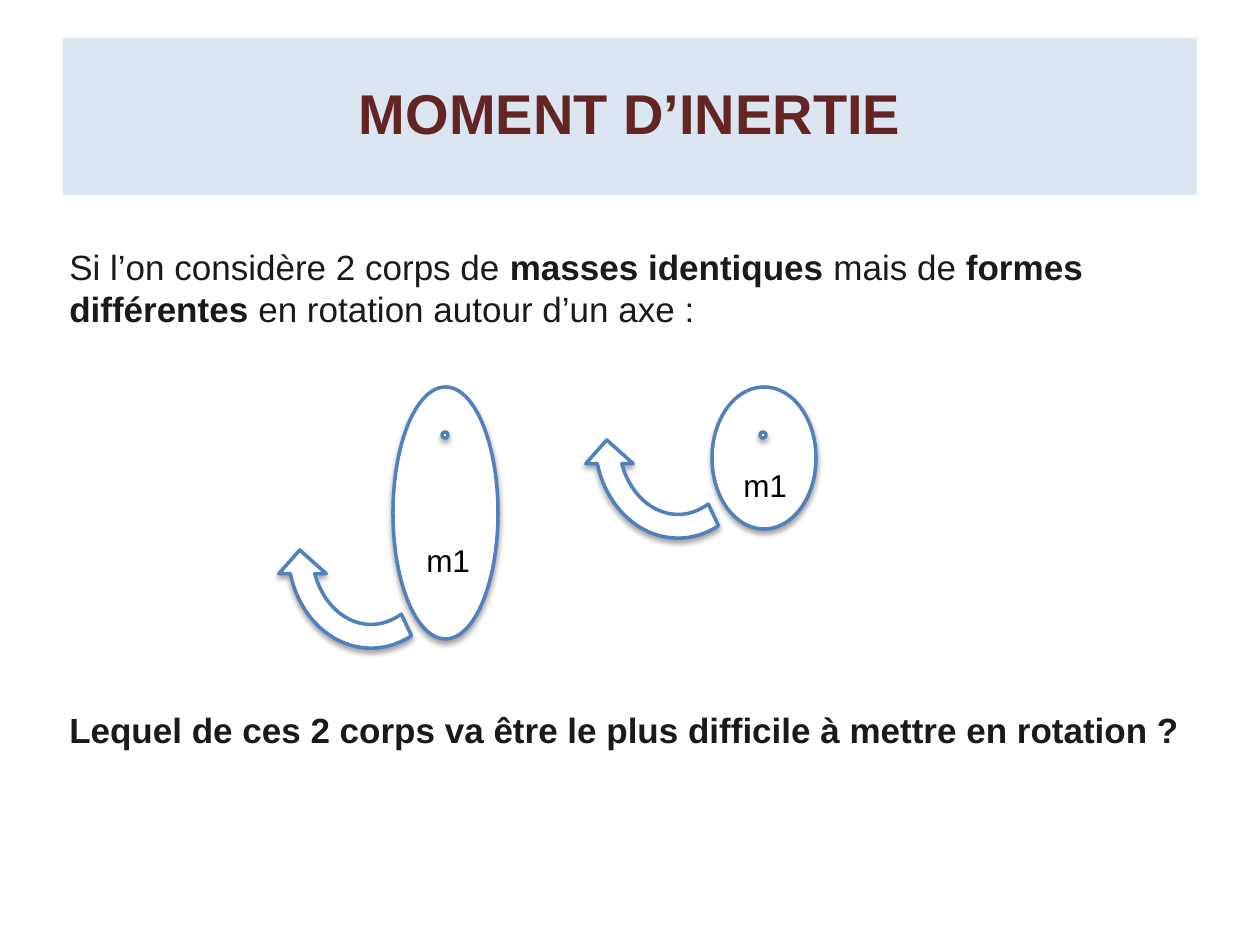
from lxml import etree
from pptx import Presentation
from pptx import util as u
from pptx.dml.color import RGBColor
from pptx.enum import shapes, text
from pptx.oxml import parse_xml
from pptx.oxml.ns import nsdecls

PX = u.Inches(1) / 126
FONT = "Arial"
WHITE = RGBColor(0xFF, 0xFF, 0xFF)
BLACK = RGBColor(0, 0, 0)
BANNER = RGBColor(0xDC, 0xE6, 0xF2)
MAROON = RGBColor(0x63, 0x25, 0x23)
INK = RGBColor(0x1A, 0x1A, 0x1A)
BLUE = RGBColor(0x4F, 0x81, 0xBD)
SHADOW = (
    f"<a:effectLst {nsdecls('a')}>"
    '<a:outerShdw blurRad="38100" dist="23000" dir="5400000" rotWithShape="0">'
    '<a:srgbClr val="000000"><a:alpha val="35000"/></a:srgbClr>'
    "</a:outerShdw></a:effectLst>"
)
ARROW_ADJUSTMENTS = (0.125, 11.423, 204.577, 146.833, 0.125)
STATEMENT = (
    ("Si l’on considère 2 corps de ", False),
    ("masses identiques ", True),
    ("mais de ", False),
    ("formes différentes ", True),
    ("en rotation autour d’un axe :", False),
)
QUESTION = "Lequel de ces 2 corps va être le plus difficile à mettre en rotation ?"


def emu(*lengths):
    """Turn px lengths into EMU."""
    return [round(length * PX) for length in lengths]


def style(paragraph, size, color, bold=None):
    """Set the font of a whole paragraph."""
    font = paragraph.font
    font.name, font.size, font.bold = FONT, u.Pt(size), bold
    font.color.rgb = color


def set_margins(frame, margin):
    """Give a text frame equal margins and wrapping."""
    frame.word_wrap = True
    frame.margin_left = frame.margin_right = u.Inches(margin)
    frame.margin_top = frame.margin_bottom = u.Inches(margin)


def add_title(slide, wording, box):
    """Add the title banner."""
    banner = slide.shapes.add_shape(shapes.MSO_SHAPE.RECTANGLE, *emu(*box))
    banner.shadow.inherit = False
    banner.fill.solid()
    banner.fill.fore_color.rgb = BANNER
    banner.line.fill.background()
    frame = banner.text_frame
    set_margins(frame, 0)
    frame.vertical_anchor = text.MSO_ANCHOR.MIDDLE
    title = frame.paragraphs[0]
    title.text = wording
    title.alignment = text.PP_ALIGN.CENTER
    title.line_spacing = 0.9
    style(title, 32, MAROON, True)


def add_text_frame(slide, box):
    """Add a text box and return its frame."""
    frame = slide.shapes.add_textbox(*emu(*box)).text_frame
    set_margins(frame, 0.05)
    return frame


def add_body(slide, box):
    """Add the statement and the question below the drawing."""
    frame = add_text_frame(slide, box)
    statement = frame.paragraphs[0]
    for wording, bold in STATEMENT:
        run = statement.add_run()
        run.text, run.font.bold = wording, bold
    style(statement, 20, INK)
    question = frame.add_paragraph()
    question.text = QUESTION
    question.space_before = u.Pt(217)
    style(question, 20, INK, True)


def add_outlined(slide, preset, box):
    """Add a white shape with a blue outline and a soft shadow."""
    outlined = slide.shapes.add_shape(preset, *emu(*box))
    outlined.fill.solid()
    outlined.fill.fore_color.rgb = WHITE
    outlined.line.color.rgb = BLUE
    outlined.line.width = u.Pt(2)
    outlined.element.spPr.append(parse_xml(SHADOW))
    return outlined


def add_body_in_rotation(slide, ellipse, axis, label, arrow):
    """Add one rotating body with its axis, mass label and arrow."""
    add_outlined(slide, shapes.MSO_SHAPE.OVAL, ellipse)
    add_outlined(slide, shapes.MSO_SHAPE.OVAL, (*axis, 6, 6))
    mass = add_text_frame(slide, (*label, 78, 50)).paragraphs[0]
    mass.text = "m1"
    style(mass, 18, BLACK)
    turn = add_outlined(slide, shapes.MSO_SHAPE.CIRCULAR_ARROW, (*arrow, 190, 220))
    turn.rotation = 180
    for index, value in enumerate(ARROW_ADJUSTMENTS):
        turn.adjustments[index] = value


def main():
    """Build the slide and save it."""
    deck = Presentation()
    deck.slide_width, deck.slide_height = emu(1260, 945)
    slide = deck.slides.add_slide(deck.slide_layouts[6])
    add_title(slide, "MOMENT D’INERTIE", (63, 38, 1134, 157))
    add_body(slide, (63, 239, 1134, 522))
    add_body_in_rotation(slide, (393, 387, 105, 252), (442, 432), (420, 535), (276, 440))
    add_body_in_rotation(slide, (712, 387, 104, 142), (760, 432), (737, 460), (583, 330))
    deck.save("out.pptx")


if __name__ == "__main__":
    main()
